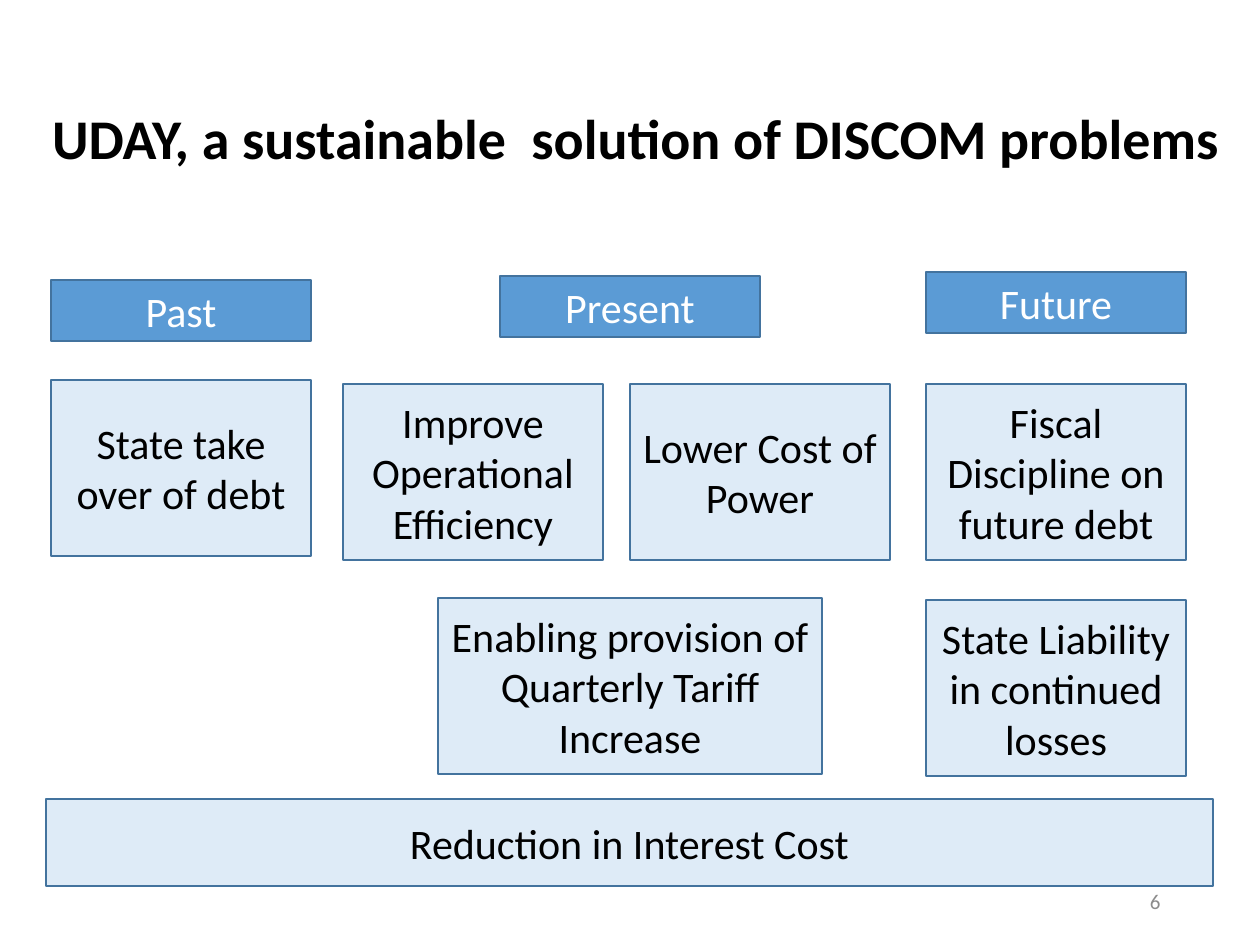
import pptx
import pptx.util
import pptx.dml.color
import pptx.enum.shapes
import pptx.enum.text

EMU_PER_PX = 914400 / 126
COLORS = {"header": "5B9BD5", "box": "DEEBF7", "line": "43739E",
          "black": "000000", "white": "FFFFFF", "gray": "8C8C8C"}
ALIGN = pptx.enum.text.PP_ALIGN


def px(*lengths):
    """Turn pixel lengths into EMU."""
    return [pptx.util.Emu(round(n * EMU_PER_PX)) for n in lengths]


def write(s, text, size, color, align=ALIGN.CENTER, bold=False):
    tf = s.text_frame
    tf.word_wrap = True
    tf.vertical_anchor = pptx.enum.text.MSO_ANCHOR.MIDDLE
    p = tf.paragraphs[0]
    p.alignment = align
    r = p.add_run()
    r.text = text
    formats = {"name": "Calibri", "size": pptx.util.Pt(size), "bold": bold}
    for name, value in formats.items():
        setattr(r.font, name, value)
    r.font.color.rgb = pptx.dml.color.RGBColor.from_string(COLORS[color])
    return p


prs = pptx.Presentation()
prs.slide_width, prs.slide_height = px(1260, 945)
slide = prs.slides.add_slide(prs.slide_layouts[5])

title = slide.shapes.title
title.left, title.top, title.width, title.height = px(20, 50, 1232, 183)
p = write(title, "UDAY, a sustainable  solution of DISCOM problems", 32, "black", bold=True)
p.line_spacing = 0.9

number = slide.shapes.add_textbox(*px(890, 876, 283, 50))
write(number, "6", 12, "gray", ALIGN.RIGHT)

COL_W, HEADER_H, BOX_H = 260, 61, 176
PAST_X, FUTURE_X = 51, 926
boxes = [
    ("Past", PAST_X, 280, COL_W, HEADER_H, "header", "white"),
    ("Present", 500, 276, COL_W, HEADER_H, "header", "white"),
    ("Future", FUTURE_X, 272, COL_W, HEADER_H, "header", "white"),
    ("State take over of debt", PAST_X, 380, COL_W, BOX_H, "box", "black"),
    ("Improve Operational Efficiency", 343, 384, COL_W, BOX_H, "box", "black"),
    ("Lower Cost of Power", 630, 384, COL_W, BOX_H, "box", "black"),
    ("Fiscal Discipline on future debt", FUTURE_X, 384, COL_W, BOX_H, "box", "black"),
    ("Enabling provision of Quarterly Tariff Increase", 438, 598, 384, BOX_H, "box", "black"),
    ("State Liability in continued losses", FUTURE_X, 600, COL_W, BOX_H, "box", "black"),
    ("Reduction in Interest Cost", 46, 799, 1167, 87, "box", "black"),
]
for text, x, y, w, h, fill, color in boxes:
    s = slide.shapes.add_shape(pptx.enum.shapes.MSO_SHAPE.RECTANGLE, *px(x, y, w, h))
    s.shadow.inherit = False
    s.fill.solid()
    s.fill.fore_color.rgb = pptx.dml.color.RGBColor.from_string(COLORS[fill])
    s.line.color.rgb = pptx.dml.color.RGBColor.from_string(COLORS["line"])
    s.line.width = pptx.util.Pt(1)
    write(s, text, 24, color)

prs.save("out.pptx")
